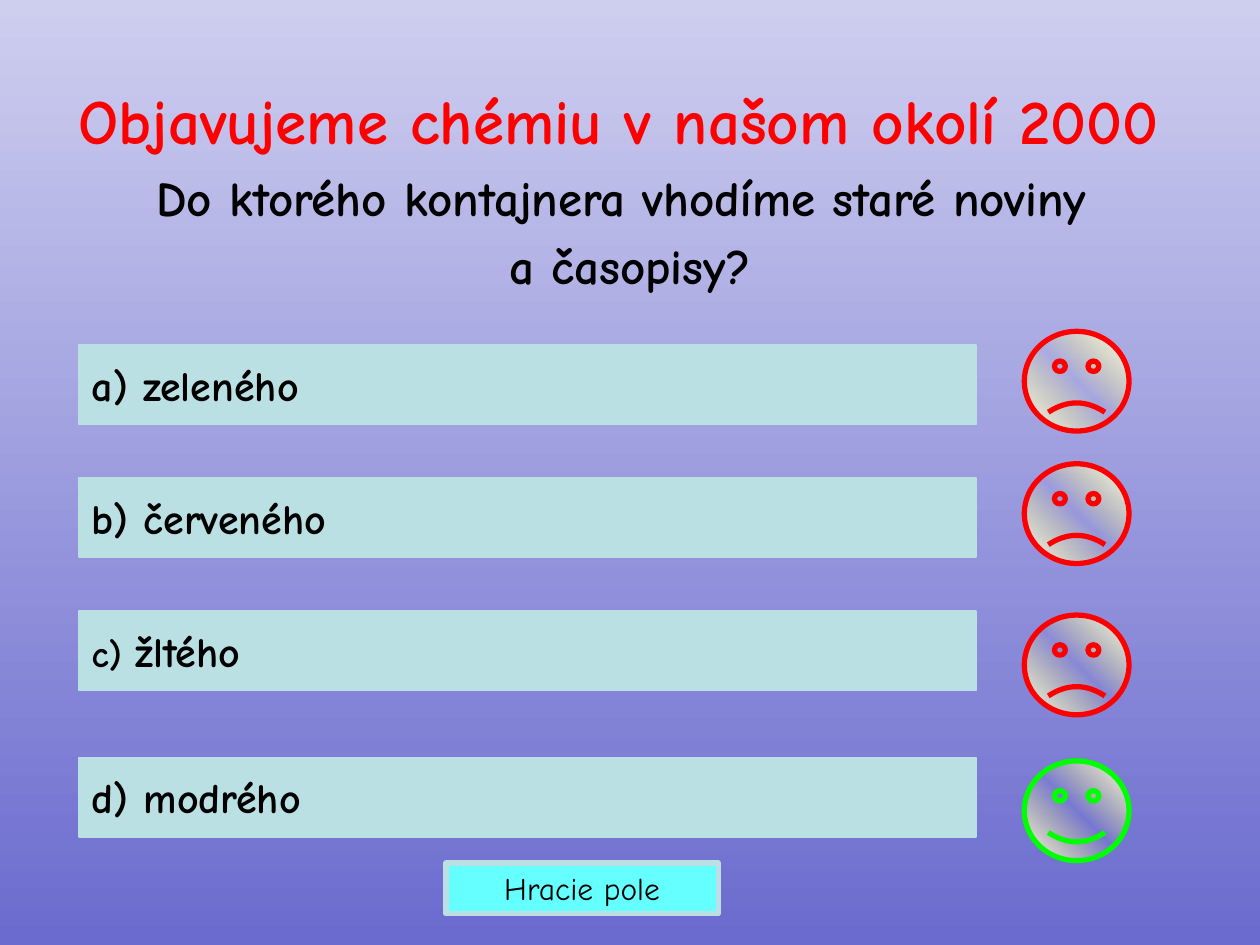
from copy import deepcopy

from lxml.etree import SubElement
from pptx import Presentation
from pptx.dml.color import RGBColor
from pptx.enum.shapes import MSO_SHAPE
from pptx.enum.text import MSO_ANCHOR, MSO_AUTO_SIZE, PP_ALIGN
from pptx.oxml.ns import qn
from pptx.util import Cm, Pt

HEADING = [
    ("Objavujeme chémiu v našom okolí 2000 ", "heading", "red"),
    ("Do ktorého kontajnera vhodíme staré noviny ", "question", "ink"),
    ("a časopisy?", "question", "ink"),
]
ANSWERS = [
    {"runs": [("a) zeleného", "answer")], "top": 6.96, "face_top": 6.68, "correct": False},
    {"runs": [("b) červeného", "answer")], "top": 9.63, "face_top": 9.35, "correct": False},
    {"runs": [("c) ", "small_label"), ("žltého", "answer")], "top": 12.32, "face_top": 12.4, "correct": False},
    {"runs": [("d) modrého", "answer")], "top": 15.27, "face_top": 15.34, "correct": True},
]
BACK_BUTTON = [("Hracie pole", "button")]

THEME = {
    "font": "Comic Neue",
    "sizes": {"heading": 36, "question": 28, "answer": 24, "small_label": 21, "button": 18},
    "colors": {"red": "FF0000", "green": "00FF00", "ink": "000000", "bar": "BBE0E3", "button": "66FFFF"},
    "backdrop": [(0, "CECEEF", 100), (100, "6B6BCF", 100)],
    "face": [(0, "FFFFFF", 100), (50, "FFFF66", 0), (100, "FFFFFF", 100)],
}


def color(name):
    return RGBColor.from_string(THEME["colors"][name])


def write(paragraph, text, size, ink="ink", bold=True):
    run = paragraph.add_run()
    run.text = text
    style = {"name": THEME["font"], "size": Pt(THEME["sizes"][size]), "bold": bold}
    for attribute, value in style.items():
        setattr(run.font, attribute, value)
    run.font.color.rgb = color(ink)


def fill_gradient(fill, owner, stops, clockwise):
    fill.gradient()
    fill.gradient_angle = 360 - clockwise
    stop_list = next(owner.iter(qn("a:gsLst")))
    for _ in stops[2:]:
        stop_list.append(deepcopy(stop_list[0]))
    for stop, (position, rgb, opacity) in zip(fill.gradient_stops, stops):
        stop.position = position / 100
        stop.color.rgb = RGBColor.from_string(rgb)
    for element, (_, _, opacity) in zip(stop_list, stops):
        if opacity < 100:
            SubElement(element[0], qn("a:alpha"), val=str(opacity * 1000))


def add_outlined(slide, kind, box, line, width):
    shape = slide.shapes.add_shape(kind, *map(Cm, box))
    shape.shadow.inherit = False
    shape.line.color.rgb = color(line)
    shape.line.width = Pt(width)
    return shape


def add_bar(slide, box, runs, fill, width, align, bold):
    bar = add_outlined(slide, MSO_SHAPE.ACTION_BUTTON_CUSTOM, box, "bar", width)
    bar.fill.solid()
    bar.fill.fore_color.rgb = color(fill)
    frame = bar.text_frame
    for attribute, value in {"word_wrap": False, "vertical_anchor": MSO_ANCHOR.MIDDLE}.items():
        setattr(frame, attribute, value)
    paragraph = frame.paragraphs[0]
    paragraph.alignment = align
    for text, size in runs:
        write(paragraph, text, size, bold=bold)


def add_face(slide, top, correct):
    face = add_outlined(slide, MSO_SHAPE.SMILEY_FACE, (20.65, top, 2.11, 2.01),
                        "green" if correct else "red", 3)
    face.adjustments[0] = 0.047 if correct else -0.047
    fill_gradient(face.fill, face._element, THEME["face"], 315)


def place_heading(title):
    bounds = {"left": Cm(0), "top": Cm(1.52), "width": Cm(25.4), "height": Cm(2.01)}
    for attribute, value in bounds.items():
        setattr(title, attribute, value)
    frame = title.text_frame
    layout = {"word_wrap": True, "auto_size": MSO_AUTO_SIZE.NONE, "vertical_anchor": MSO_ANCHOR.TOP}
    for attribute, value in layout.items():
        setattr(frame, attribute, value)
    for index, (text, size, ink) in enumerate(HEADING):
        paragraph = frame.add_paragraph() if index else frame.paragraphs[0]
        paragraph.alignment = PP_ALIGN.CENTER
        properties = paragraph._p.get_or_add_pPr()
        properties.set("marL", str(Cm(0.95)))
        properties.set("indent", str(-Cm(0.95)))
        SubElement(SubElement(properties, qn("a:spcBef")), qn("a:spcPct"), val="20000")
        write(paragraph, text, size, ink)


def main():
    deck = Presentation()
    deck.slide_width, deck.slide_height = Cm(25.4), Cm(19.05)
    slide = deck.slides.add_slide(deck.slide_layouts[5])
    fill_gradient(slide.background.fill, slide._element, THEME["backdrop"], 90)
    place_heading(slide.shapes.title)
    for answer in ANSWERS:
        add_bar(slide, (1.6, answer["top"], 18.08, 1.6), answer["runs"], "bar", 1, PP_ALIGN.LEFT, True)
        add_face(slide, answer["face_top"], answer["correct"])
    add_bar(slide, (8.99, 17.4, 5.49, 1.02), BACK_BUTTON, "button", 3, PP_ALIGN.CENTER, False)
    deck.save("out.pptx")


if __name__ == "__main__":
    main()
